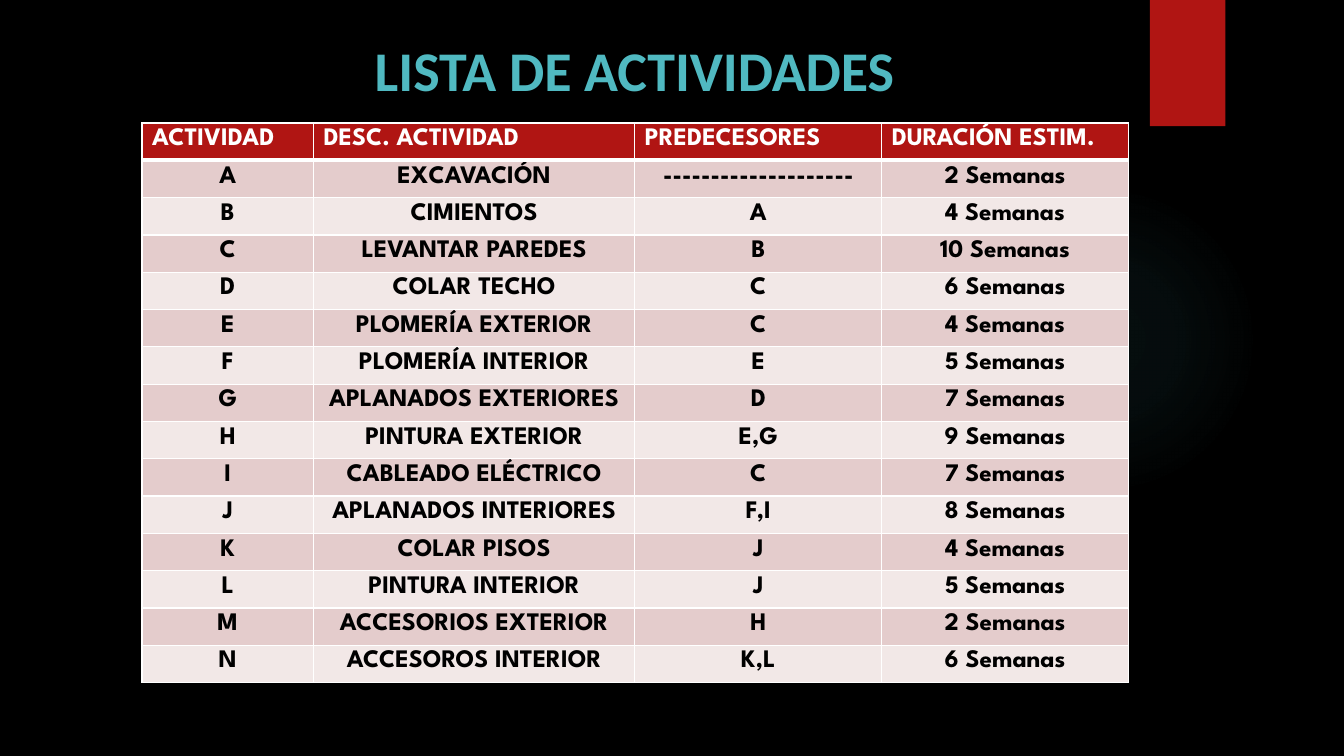
from dataclasses import dataclass

from lxml.etree import SubElement
from pptx import Presentation
from pptx.dml.color import RGBColor as Color
from pptx.enum.shapes import MSO_SHAPE as Shape
from pptx.enum.text import MSO_ANCHOR as Anchor, MSO_AUTO_SIZE as AutoSize, PP_ALIGN as Align
from pptx.oxml import parse_xml
from pptx.oxml.ns import nsdecls, qn
from pptx.util import Cm, Pt


@dataclass(frozen=True)
class Theme:
    """Colours, fonts and type sizes of the slide."""
    background: str = "000000"
    red: str = "B01513"
    teal: str = "50B9C1"
    white: str = "FFFFFF"
    black: str = "000000"
    bands: tuple = ("E4CCCC", "F2E8E7")
    title_font: str = "Calibri"
    table_font: str = "League Spartan"
    title_size: int = 40
    table_size: int = 18
    thin_border: int = 1
    thick_border: int = 3


THEME = Theme()
GLOW_STOPS = ((0, 7), (36, 6), (69, 0))
COLUMN_WIDTHS = (4.32, 8.1, 6.22, 6.22)
ROW_HEIGHT = 0.94
HEADERS = ("ACTIVIDAD", "DESC. ACTIVIDAD", "PREDECESORES", "DURACIÓN ESTIM.")
ACTIVITIES = (
    ("A", "EXCAVACIÓN", "--------------------", 2),
    ("B", "CIMIENTOS", "A", 4),
    ("C", "LEVANTAR PAREDES", "B", 10),
    ("D", "COLAR TECHO", "C", 6),
    ("E", "PLOMERÍA EXTERIOR", "C", 4),
    ("F", "PLOMERÍA INTERIOR", "E", 5),
    ("G", "APLANADOS EXTERIORES", "D", 7),
    ("H", "PINTURA EXTERIOR", "E,G", 9),
    ("I", "CABLEADO ELÉCTRICO", "C", 7),
    ("J", "APLANADOS INTERIORES", "F,I", 8),
    ("K", "COLAR PISOS", "J", 4),
    ("L", "PINTURA INTERIOR", "J", 5),
    ("M", "ACCESORIOS EXTERIOR", "H", 2),
    ("N", "ACCESOROS INTERIOR", "K,L", 6),
)


def style_paragraph(para, font, size, color, align):
    """Set the alignment and bold font of a paragraph."""
    para.alignment = align
    para.font.name = font
    para.font.size = Pt(size)
    para.font.bold = True
    para.font.color.rgb = Color.from_string(color)


def add_plain_shape(page, kind, left, top, width, height, color):
    """Add a filled shape without outline or shadow."""
    shape = page.shapes.add_shape(kind, Cm(left), Cm(top), Cm(width), Cm(height))
    shape.shadow.inherit = False
    shape.fill.solid()
    shape.fill.fore_color.rgb = Color.from_string(color)
    shape.line.fill.background()
    return shape


def add_glow(page):
    """Add the faint radial glow beside the table."""
    glow = add_plain_shape(page, Shape.OVAL, 23.9, 4.65, 7.82, 7.82, THEME.teal)
    stops = "".join(
        f'<a:gs pos="{place * 1000}"><a:srgbClr val="{THEME.teal}">'
        f'<a:alpha val="{alpha * 1000}"/></a:srgbClr></a:gs>'
        for place, alpha in GLOW_STOPS
    )
    gradient = parse_xml(
        f'<a:gradFill {nsdecls("a")}><a:gsLst>{stops}</a:gsLst><a:path path="circle">'
        '<a:fillToRect l="50000" t="50000" r="50000" b="50000"/></a:path></a:gradFill>'
    )
    properties = glow.element.spPr
    properties.replace(properties.find(qn("a:solidFill")), gradient)


def set_title(page, text):
    """Place and format the title placeholder."""
    title = page.shapes.title
    title.left, title.top, title.width, title.height = Cm(2.92), Cm(0.64), Cm(26.14), Cm(2.18)
    frame = title.text_frame
    frame.text = text
    frame.auto_size = AutoSize.NONE
    frame.vertical_anchor = Anchor.MIDDLE
    style_paragraph(frame.paragraphs[0], THEME.title_font, THEME.title_size,
                    THEME.teal, Align.CENTER)


def set_borders(cell, top, bottom):
    """Draw white borders with the given top and bottom widths."""
    properties = cell._tc.get_or_add_tcPr()
    widths = {"lnL": THEME.thin_border, "lnR": THEME.thin_border, "lnT": top, "lnB": bottom}
    for side, width in widths.items():
        line = SubElement(properties, qn(f"a:{side}"), w=str(Pt(width)))
        fill = SubElement(line, qn("a:solidFill"))
        SubElement(fill, qn("a:srgbClr"), val=THEME.white)


def fill_cell(cell, text, row):
    """Write and format one cell according to its row."""
    header = row == 0
    set_borders(cell,
                top=THEME.thick_border if row == 1 else THEME.thin_border,
                bottom=THEME.thick_border if header else THEME.thin_border)
    cell.fill.solid()
    fill = THEME.red if header else THEME.bands[(row - 1) % 2]
    cell.fill.fore_color.rgb = Color.from_string(fill)
    cell.text = text
    style_paragraph(cell.text_frame.paragraphs[0], THEME.table_font, THEME.table_size,
                    THEME.white if header else THEME.black,
                    Align.LEFT if header else Align.CENTER)


def add_activity_table(page):
    """Add the table of activities."""
    rows = [HEADERS] + [(*names, f"{weeks} Semanas") for *names, weeks in ACTIVITIES]
    table = page.shapes.add_table(
        len(rows), len(HEADERS), Cm(3.58), Cm(3.1),
        Cm(sum(COLUMN_WIDTHS)), Cm(ROW_HEIGHT * len(rows)),
    ).table
    for column, width in zip(table.columns, COLUMN_WIDTHS):
        column.width = Cm(width)
    for index, texts in enumerate(rows):
        table.rows[index].height = Cm(ROW_HEIGHT)
        for cell, text in zip(table.rows[index].cells, texts):
            fill_cell(cell, text, index)


def main():
    """Build and save the slide."""
    deck = Presentation()
    deck.slide_width, deck.slide_height = Cm(33.87), Cm(19.05)
    page = deck.slides.add_slide(deck.slide_layouts.get_by_name("Title Only"))
    page.background.fill.solid()
    page.background.fill.fore_color.rgb = Color.from_string(THEME.background)
    add_glow(page)
    add_plain_shape(page, Shape.RECTANGLE, 28.98, 0, 1.9, 3.18, THEME.red)
    set_title(page, "LISTA DE ACTIVIDADES")
    add_activity_table(page)
    deck.save("out.pptx")


if __name__ == "__main__":
    main()
